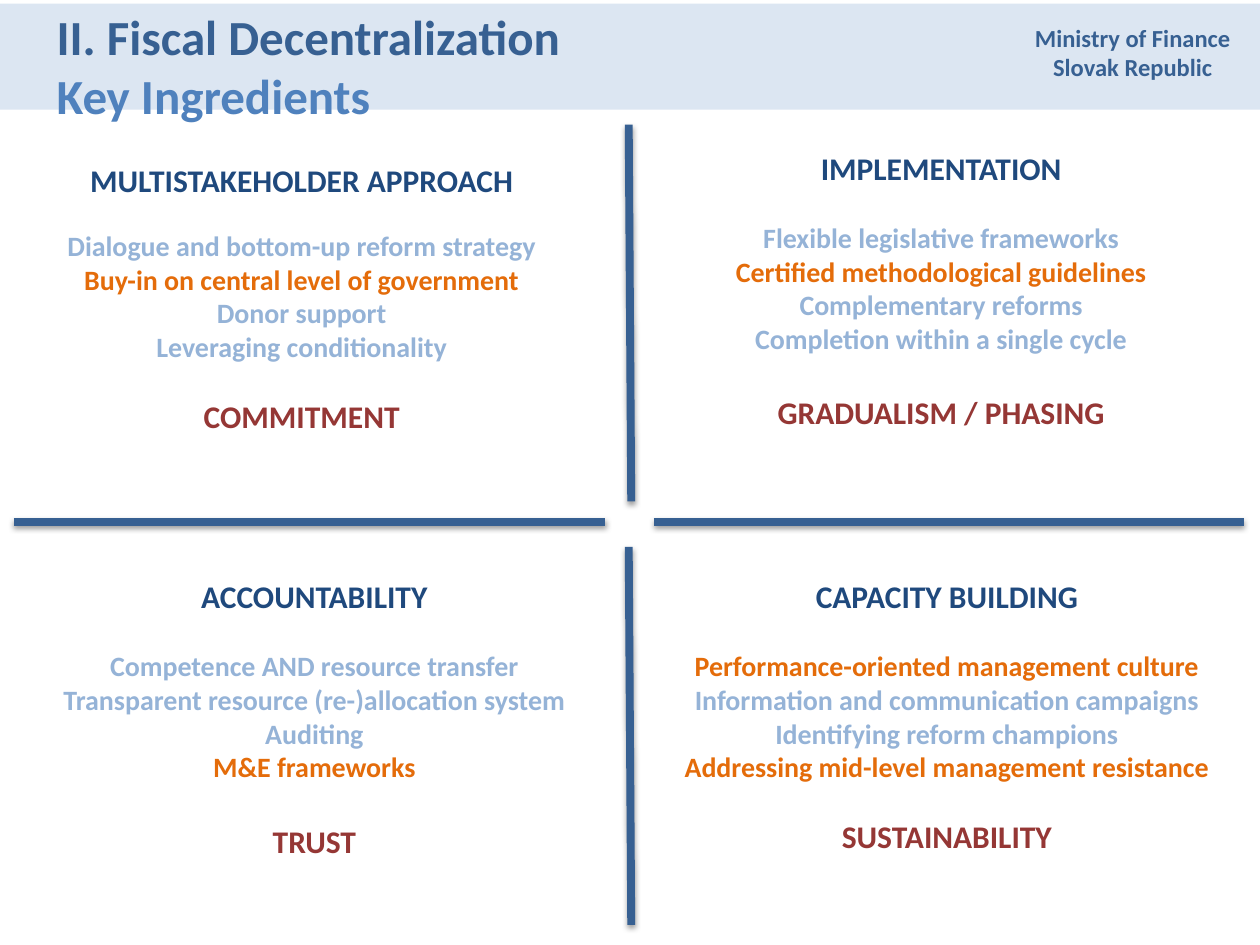
from lxml import etree
from pptx import Presentation
from pptx.dml.color import RGBColor
from pptx.enum.shapes import MSO_CONNECTOR, MSO_SHAPE
from pptx.enum.text import MSO_ANCHOR, MSO_AUTO_SIZE, PP_ALIGN
from pptx.oxml import parse_xml
from pptx.oxml.ns import nsdecls
from pptx.util import Inches, Pt

COLORS = {
    "band": "DCE6F2", "blue": "376092", "subtitle": "4F81BD", "heading": "1F497D",
    "plain": "95B3D7", "accent": "E46C0A", "result": "953735",
}

DIVIDERS = [
    (4.99, 0.99, 5.01, 3.98), (4.99, 4.34, 5.01, 7.34),
    (0.11, 4.14, 4.8, 4.14), (5.19, 4.14, 9.87, 4.14),
]

QUADRANTS = [
    ((0.06, 0.92, 4.67, 2.92), "MULTISTAKEHOLDER APPROACH", [
        ("Dialogue and bottom-up reform strategy", "plain"),
        ("Buy-in on central level of government", "accent"),
        ("Donor support", "plain"),
        ("Leveraging conditionality", "plain"),
    ], "COMMITMENT", (17, 19.5)),
    ((5.27, 0.82, 4.4, 3.02), "IMPLEMENTATION", [
        ("Flexible legislative frameworks", "plain"),
        ("Certified methodological guidelines", "accent"),
        ("Complementary reforms", "plain"),
        ("Completion within a single cycle", "plain"),
    ], "GRADUALISM / PHASING", (19.5, 22)),
    ((0.27, 4.22, 4.45, 3.12), "ACCOUNTABILITY", [
        ("Competence AND resource transfer", "plain"),
        ("Transparent resource (re-)allocation system", "plain"),
        ("Auditing", "plain"),
        ("M&E frameworks", "accent"),
    ], "TRUST", (19.5, 22)),
    ((5.27, 4.22, 4.49, 2.85), "CAPACITY BUILDING", [
        ("Performance-oriented management culture", "accent"),
        ("Information and communication campaigns", "plain"),
        ("Identifying reform champions", "plain"),
        ("Addressing mid-level management resistance", "accent"),
    ], "SUSTAINABILITY", (19.5, 19.5)),
]


def color(name):
    """Return the named palette colour."""
    return RGBColor.from_string(COLORS[name])


def write_lines(tf, lines, align):
    """Write (text, size, colour, space before) lines as bold paragraphs."""
    tf.word_wrap = True
    tf.auto_size = MSO_AUTO_SIZE.NONE
    tf.vertical_anchor = MSO_ANCHOR.TOP
    for i, (text, size, name, before) in enumerate(lines):
        p = tf.paragraphs[0] if i == 0 else tf.add_paragraph()
        p.text = text
        p.alignment = align
        p.space_before = Pt(before)
        p.font.name = "Calibri"
        p.font.size = Pt(size)
        p.font.bold = True
        p.font.color.rgb = color(name)


def add_header(s, box):
    """Place the band, the title and the ministry name in the box."""
    left, top, width, height = box
    band = s.shapes.add_shape(MSO_SHAPE.RECTANGLE, *map(Inches, box))
    band.shadow.inherit = False
    band.fill.solid()
    band.fill.fore_color.rgb = color("band")
    band.line.fill.background()
    title = s.shapes.title
    band._element.addnext(title._element)

    title.left, title.top = Inches(left + 0.35), Inches(top - 0.03)
    title.width, title.height = Inches(7.4), Inches(1.04)
    write_lines(title.text_frame, [
        ("II. Fiscal Decentralization", 28, "blue", 0),
        ("Key Ingredients", 28, "subtitle", 0),
    ], PP_ALIGN.LEFT)

    ministry = s.shapes.add_textbox(
        Inches(left + width - 2.15), Inches(top + 0.1), Inches(2.28), Inches(0.57))
    write_lines(ministry.text_frame, [
        ("Ministry of Finance", 14, "blue", 0),
        ("Slovak Republic", 14, "blue", 0),
    ], PP_ALIGN.CENTER)


def add_divider(s, ends):
    """Draw a thick line with a soft shadow below it."""
    line = s.shapes.add_connector(MSO_CONNECTOR.STRAIGHT, *map(Inches, ends))
    line.line.color.rgb = color("blue")
    line.line.width = Pt(4.5)
    effects = parse_xml(f"<a:effectLst {nsdecls('a')}/>")
    shadow = etree.SubElement(
        effects, effects.tag.replace("effectLst", "outerShdw"),
        blurRad=str(Pt(3.1)), dist=str(Pt(1.6)), dir="5400000", rotWithShape="0")
    rgb = etree.SubElement(
        shadow, effects.tag.replace("effectLst", "srgbClr"), val="000000")
    etree.SubElement(rgb, effects.tag.replace("effectLst", "alpha"), val="38000")
    line._element.spPr.append(effects)


def add_quadrant(s, box, heading, items, result, gaps):
    """Place a heading, its ingredients and their result in the box."""
    tf = s.shapes.add_textbox(*map(Inches, box)).text_frame
    tf.margin_top = Inches(0.36)
    body_gap, result_gap = gaps
    body = [(text, 16, name, 0 if i else body_gap)
            for i, (text, name) in enumerate(items)]
    write_lines(tf, [
        (heading, 18, "heading", 0), *body, (result, 18, "result", result_gap),
    ], PP_ALIGN.CENTER)


def main():
    """Build and save the slide."""
    prs = Presentation()
    prs.slide_width, prs.slide_height = Inches(10), Inches(7.5)
    s = prs.slides.add_slide(prs.slide_layouts[5])
    add_header(s, (0, 0.03, 10, 0.84))
    for ends in DIVIDERS:
        add_divider(s, ends)
    for quadrant in QUADRANTS:
        add_quadrant(s, *quadrant)
    prs.save("out.pptx")


if __name__ == "__main__":
    main()
